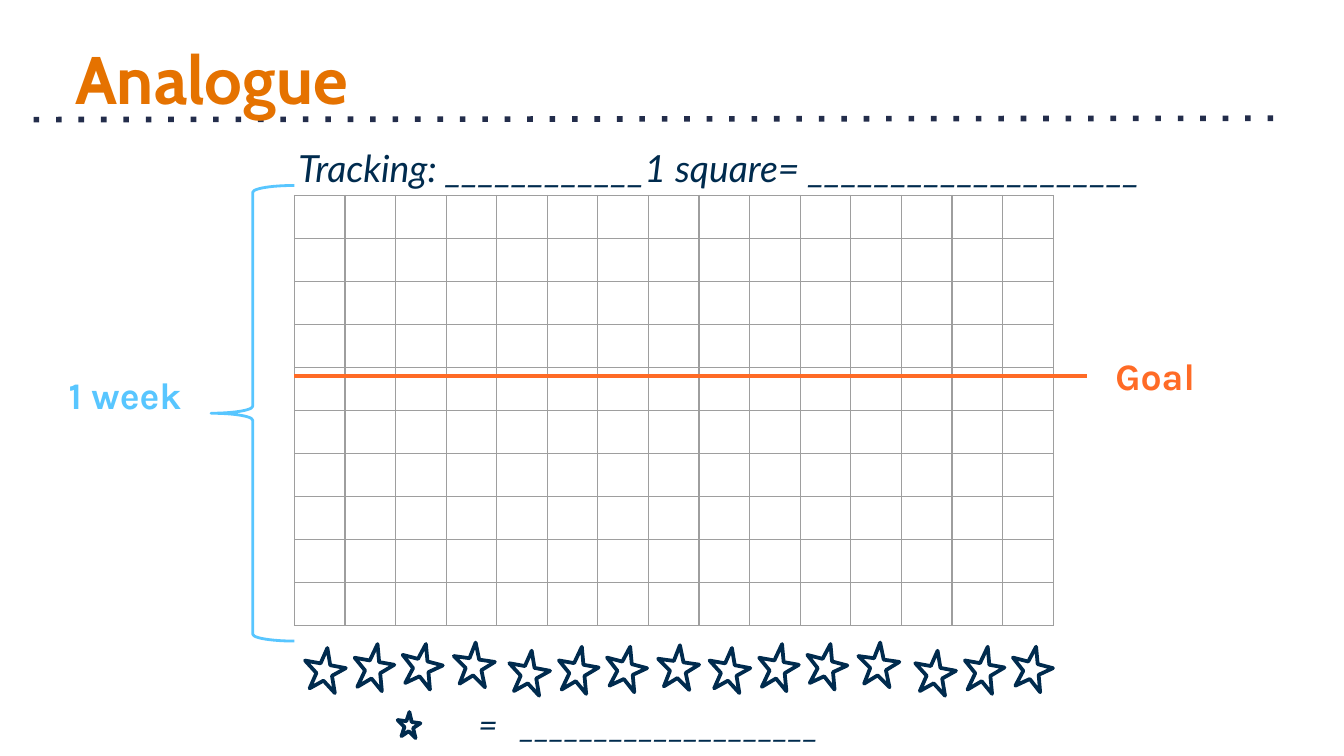
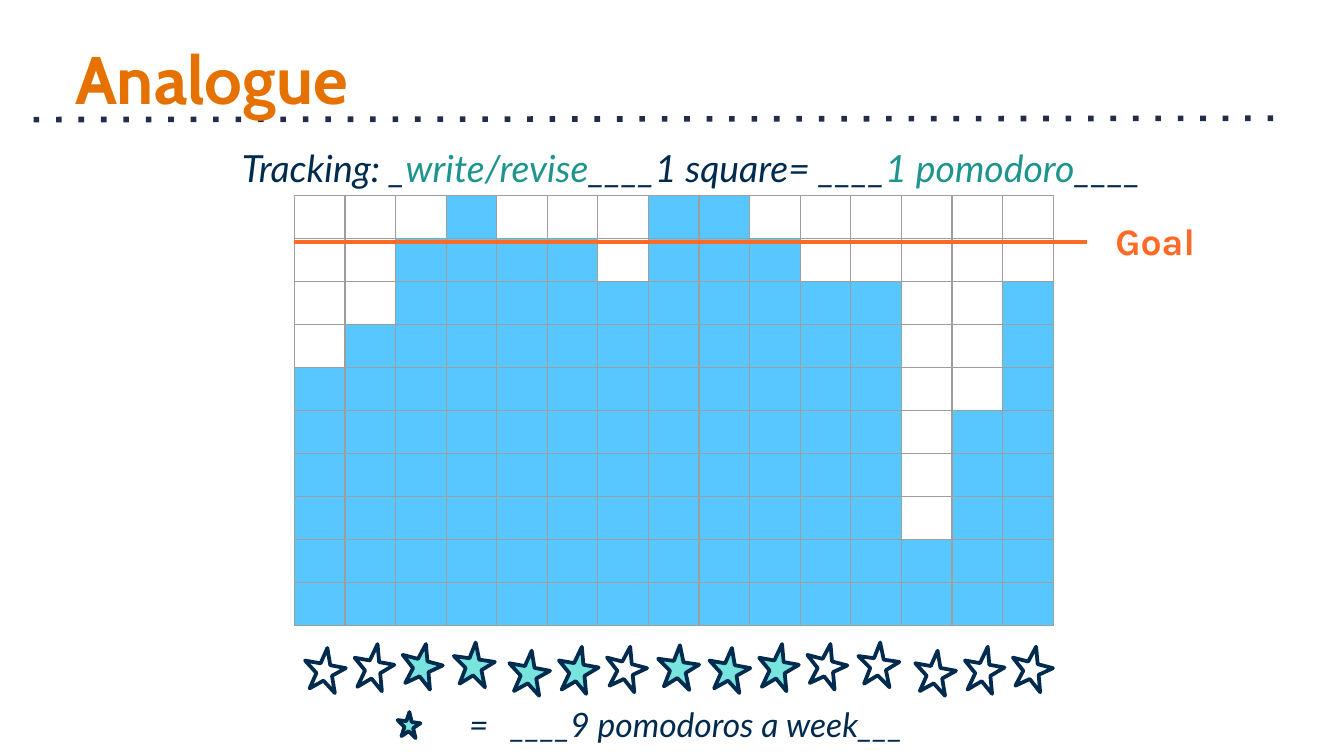
from lxml import etree
from pptx import Presentation
from pptx import util as u
from pptx.dml.color import RGBColor
from pptx.enum import shapes, text
from pptx.oxml import parse_xml
from pptx.oxml.ns import qn

NS = 'xmlns:a="http://schemas.openxmlformats.org/drawingml/2006/main"'
HUES = dict(title="E57200", rule="232D4B", navy="002B4E", teal="1D958E",
            sky="58C6FF", mint="77E4DD", goal="FF6B26", grid="9E9E9E")
FONTS = {
    "title": dict(name="Cabin", size=u.Pt(36), bold=True),
    "label": dict(name="Karla", size=u.Pt(20), bold=True),
    "note": dict(name="Lato", size=u.Pt(20), italic=True),
    "key": dict(name="Lato", size=u.Pt(18), italic=True),
}
WIDE = (1, 1)
SLIM = (0.8, 0.4)

# The slide is a grid of 100 columns by 56.25 rows.
COLS, ROWS = 100, 56.25
LEFT, TOP, SPAN, DEEP = 21.9, 14.55, 56.5, 32
DAYS, STEPS = 15, 10

# Each star: column and row offset in its cluster, width, height, turn
CLUSTER = [(0, 0, 3.4, 2.9, 80.6), (3.7, -0.6, 3, 3.4, 10),
           (7.2, -0.3, 3.4, 2.9, 84.9), (11.1, -0.4, 3.4, 2.9, 78.2)]
STARTS = [(22.6, 48.5), (37.8, 48.7), (52.7, 48.5), (68, 48.7)]


def unit(n):
    """Length of n grid units."""
    return u.Inches(n * 10 / COLS)


def box(*nums):
    return [unit(n) for n in nums]


def tint(hue):
    return RGBColor.from_string(HUES[hue])


def assign(obj, vals):
    for key, val in vals.items():
        setattr(obj, key, val)


class Sheet:
    """Style and current slide of the deck."""

    def __init__(self):
        self.deck = Presentation()
        self.deck.slide_width, self.deck.slide_height = box(COLS, ROWS)
        self.slide = None

    def page(self, title):
        self.slide = self.deck.slides.add_slide(self.deck.slide_layouts[6])
        self.rule((2.5, 8.9), (95.5, 8.8), "rule", 3, dots=True)
        self.words((4.6, 1.8, 90.9, 6.9), [(title, "title")], "title", WIDE)

    def words(self, at, runs, font, pad=SLIM, right=False, low=False, hang=None):
        """Text box; runs are (text, hue) pairs, hang is (indent, overhang)."""
        frame = self.slide.shapes.add_textbox(*box(*at)).text_frame
        side, edge = box(*pad)
        assign(frame, dict(word_wrap=True, margin_left=side, margin_right=side,
                           margin_top=edge, margin_bottom=edge))
        if low:
            frame.vertical_anchor = text.MSO_ANCHOR.BOTTOM
            frame.auto_size = text.MSO_AUTO_SIZE.SHAPE_TO_FIT_TEXT
        para = frame.paragraphs[0]
        para.alignment = text.PP_ALIGN.RIGHT if right else text.PP_ALIGN.LEFT
        if hang:
            props = para._p.get_or_add_pPr()
            props.set("marL", str(unit(hang[0])))
            props.set("indent", str(-unit(hang[1])))
        for part, hue in runs:
            run = para.add_run()
            run.text = part
            assign(run.font, FONTS[font])
            run.font.color.rgb = tint(hue)

    def rule(self, start, end, hue, width, dots=False):
        line = self.slide.shapes.add_connector(
            shapes.MSO_CONNECTOR.STRAIGHT, *box(*start, *end))
        line.line.color.rgb = tint(hue)
        line.line.width = u.Pt(width)
        if dots:
            pen = line.line._get_or_add_ln()
            etree.SubElement(pen, qn("a:prstDash")).set("val", "dot")
        etree.SubElement(line._element.spPr, qn("a:effectLst"))

    def shape(self, kind, at, hue, width, fill=None, turn=0):
        item = self.slide.shapes.add_shape(kind, *box(*at))
        item.shadow.inherit = False
        item.rotation = turn
        item.line.color.rgb = tint(hue)
        item.line.width = u.Pt(width)
        self.paint(item.fill, fill)

    def paint(self, fill, hue):
        if hue:
            fill.solid()
            fill.fore_color.rgb = tint(hue)
        else:
            fill.background()

    def star(self, at, turn, full):
        self.shape(shapes.MSO_SHAPE.STAR_5_POINT, at, "navy", 2,
                   "mint" if full else None, turn)

    def chart(self, counts):
        """Grid of squares, each day filled from the bottom up."""
        table = self.slide.shapes.add_table(
            STEPS, DAYS, *box(LEFT, TOP, SPAN, DEEP)).table
        assign(table, dict(first_row=False, horz_banding=False))
        for col in table.columns:
            col.width = unit(SPAN / DAYS)
        for step, row in enumerate(table.rows):
            row.height = unit(DEEP / STEPS)
            for cell, count in zip(row.cells, counts):
                assign(cell, dict.fromkeys(
                    ("margin_left", "margin_right", "margin_top", "margin_bottom"), 0))
                self.edge(cell)
                self.paint(cell.fill, "sky" if STEPS - step <= count else None)

    def edge(self, cell):
        props = cell._tc.get_or_add_tcPr()
        for side in "LRTB":
            props.append(parse_xml(
                f'<a:ln{side} {NS} w="{u.Pt(0.75)}"><a:solidFill>'
                f'<a:srgbClr val="{HUES["grid"]}"/></a:solidFill></a:ln{side}>'))

    def stars(self, wins):
        for day, win in enumerate(wins):
            x, y = STARTS[day // 4]
            dx, dy, w, h, turn = CLUSTER[day % 4]
            self.star((x + dx, y + dy, w, h), turn, win)

    def label(self, at, word, hue):
        self.words(at, [(word, hue)], "label", WIDE, right=True, low=True)

    def track(self, runs, prize, wide, hang, counts, goal, full):
        """Tracker page; goal is the row of the goal line."""
        self.page("Analogue")
        self.words((13.2, 10.4, 72.5, 3.4), runs, "note", right=True)
        self.words((23.4, 52, wide, 6.4), [("=\t" + prize, "navy")], "key", hang=hang)
        self.stars([count >= 9 for count in counts])
        self.star((29.5, 53.2, 2, 1.6), 76.8, full)
        self.chart(counts)
        self.rule((LEFT, goal), (80.9, goal), "goal", 2.25)
        self.label((76.9, goal - 2.8, 13, 5.4), "Goal", "goal")


def main():
    sheet = Sheet()
    sheet.track([("Tracking: ____________1 square= ____________________", "navy")],
                "____________________", 39.5, (14.5, 3.1), [0] * DAYS, 28, False)
    sheet.shape(shapes.MSO_SHAPE.LEFT_BRACE, (15.7, 13.8, 6.2, 33.9), "sky", 1.5)
    sheet.label((3.2, 26.6, 11.3, 5.4), "1 week", "sky")

    sheet.track([("Tracking: _", "navy"), ("write/revise", "teal"),
                 ("____1 square= ____", "navy"), ("1 pomodoro", "teal"),
                 ("____", "navy")],
                "____9 pomodoros a week___", 45.5, (13.8, 3.1),
                [6, 7, 9, 10, 9, 9, 8, 10, 10, 9, 8, 8, 2, 5, 8], 18, True)
    sheet.deck.save("out.pptx")


if __name__ == "__main__":
    main()
